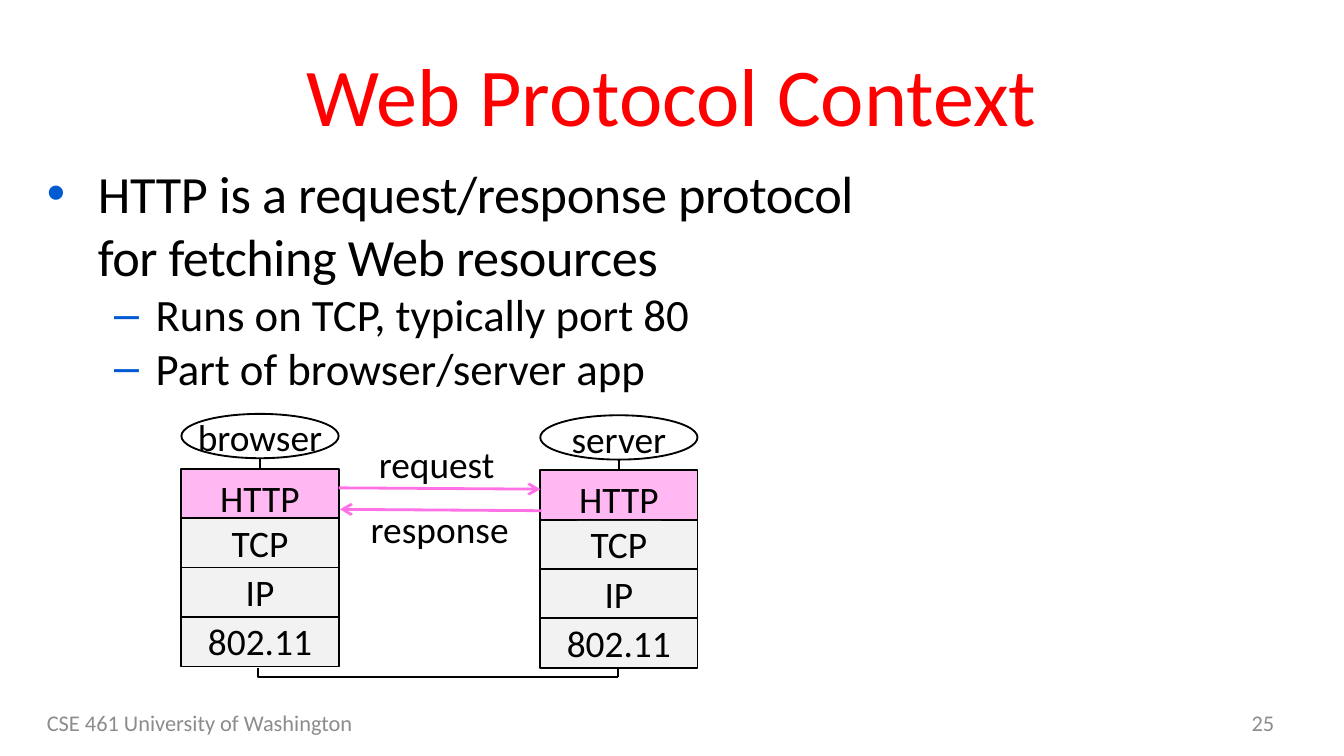
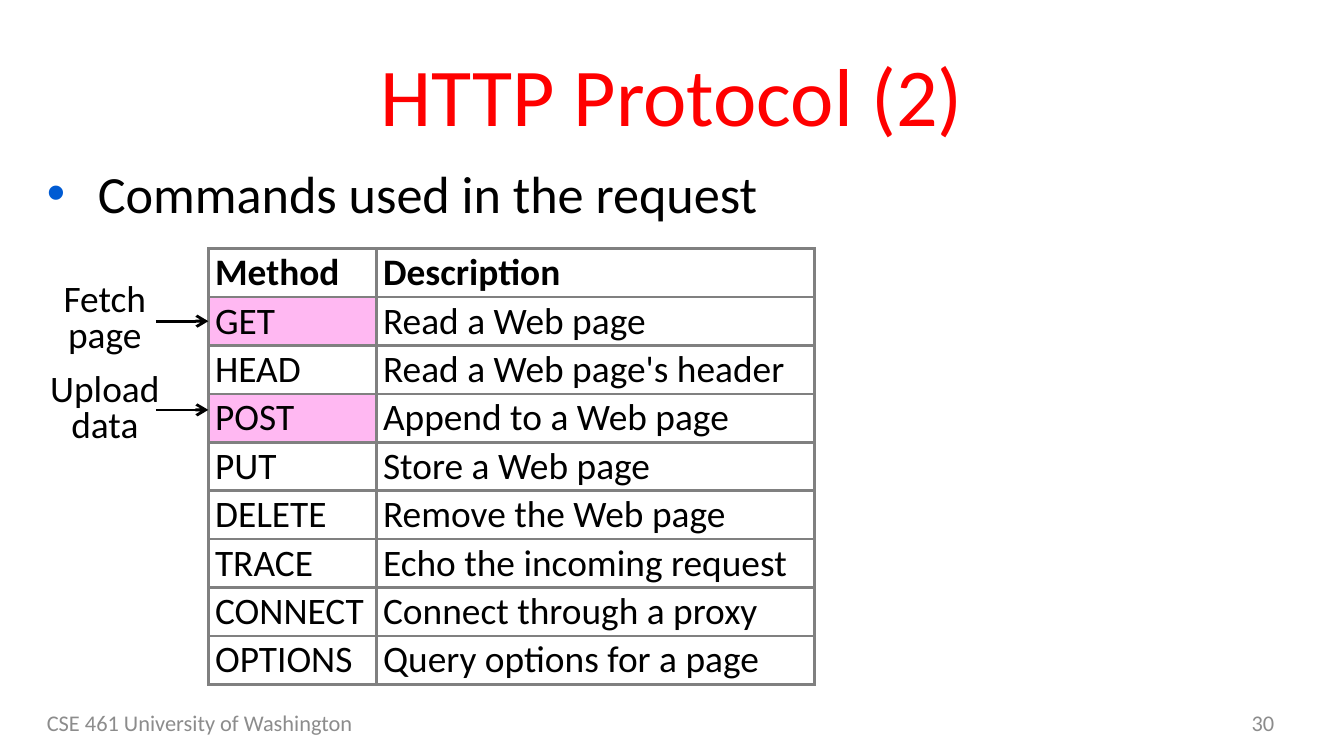
from dataclasses import dataclass
from typing import NamedTuple

from lxml.etree import SubElement
from pptx import Presentation
from pptx.dml.color import RGBColor
from pptx.enum.shapes import MSO_CONNECTOR as Connector, MSO_SHAPE as Preset
from pptx.enum.text import MSO_ANCHOR as Anchor, MSO_AUTO_SIZE as AutoSize, PP_ALIGN as Align
from pptx.oxml.ns import qn
from pptx.util import Inches, Pt


# Theme
@dataclass(frozen=True)
class Theme:
    font: str = "Calibri"
    text: str = "000000"
    title: str = "FF0000"
    bullet: str = "005BD3"
    footer: str = "8C8C8C"
    layer: str = "F2F2F2"
    highlight: str = "FFB8F2"
    message: str = "FF71E5"
    border: str = "808080"
    paper: str = "FFFFFF"
    title_size: float = 44
    body_size: float = 28
    sub_size: float = 24
    label_size: float = 20
    footer_size: float = 12
    thin: float = 1
    thick: float = 1.5


THEME = Theme()
FOOTER = "CSE 461 University of Washington"


class Box(NamedTuple):
    left: float
    top: float
    width: float
    height: float

    def lengths(self) -> list:
        return [Inches(value) for value in self]


class Bullet(NamedTuple):
    text: str
    level: int = 0
    tracking: float = 0


class Layer(NamedTuple):
    name: str
    label_width: float
    fill: str = THEME.layer


class Stack(NamedTuple):
    app: str
    app_width: float
    left: float
    top: float


class Callout(NamedTuple):
    lines: list
    box: Box
    arrow_y: float
    wrap: bool


# Slide 1 content
CONTEXT_BULLETS = [
    Bullet("HTTP is a request/response protocol for fetching Web resources", tracking=-0.2),
    Bullet("Runs on TCP, typically port 80", 1),
    Bullet("Part of browser/server app", 1),
]
LAYERS = [
    Layer("HTTP", 0.8, THEME.highlight),
    Layer("TCP", 0.63),
    Layer("IP", 0.42),
    Layer("802.11", 0.98),
]
STACKS = [Stack("browser", 1.14, 1.35, 3.08), Stack("server", 0.92, 4.02, 3.09)]
STACK_WIDTH, APP_HEIGHT, LAYER_HEIGHT = 1.17, 0.33, 0.37
LAYERS_OFFSET, LAYER_STEP = 0.41, 1.1 / 3
LABEL_HEIGHT = 0.34

# Slide 2 content
METHODS = [
    ("Method", "Description"),
    ("GET", "Read a Web page"),
    ("HEAD", "Read a Web page's header"),
    ("POST", "Append to a Web page"),
    ("PUT", "Store a Web page"),
    ("DELETE", "Remove the Web page"),
    ("TRACE", "Echo the incoming request"),
    ("CONNECT", "Connect through a proxy"),
    ("OPTIONS", "Query options for a page"),
]
HIGHLIGHTED = {"GET", "POST"}
COLUMN_WIDTHS, ROW_HEIGHT = (1.25, 3.26), 0.36
CALLOUTS = [
    Callout(["Fetch", "page"], Box(0.37, 2.06, 0.82, 0.65), 2.39, False),
    Callout(["Upload", "data"], Box(0.19, 2.73, 1.18, 0.65), 3.05, True),
]


def color(value: str) -> RGBColor:
    return RGBColor.from_string(value)


# Text
def write_text(frame, *lines: str, size: float = THEME.label_size, ink: str = THEME.text,
               bold: bool = False, align=Align.LEFT, line_spacing: float = 1.0) -> None:
    for index, line in enumerate(lines):
        paragraph = frame.paragraphs[0] if index == 0 else frame.add_paragraph()
        paragraph.alignment = align
        paragraph.line_spacing = line_spacing
        run = paragraph.add_run()
        run.text = line
        run.font.name = THEME.font
        run.font.size = Pt(size)
        run.font.bold = bold
        run.font.color.rgb = color(ink)


def add_text(slide, box: Box, *lines: str, anchor=Anchor.TOP, wrap: bool = True, grow: bool = False,
             tight: bool = False, fill: str = "", **text_format):
    shape = slide.shapes.add_textbox(*box.lengths())
    frame = shape.text_frame
    frame.word_wrap = wrap
    frame.vertical_anchor = anchor
    frame.auto_size = AutoSize.SHAPE_TO_FIT_TEXT if grow else AutoSize.NONE
    if tight:
        frame.margin_top = frame.margin_bottom = 0
    if fill:
        shape.fill.solid()
        shape.fill.fore_color.rgb = color(fill)
    write_text(frame, *lines, **text_format)
    return shape


def add_bullets(slide, bullets: list) -> None:
    frame = add_text(slide, Box(0.25, 1.15, 6.25, 3.92)).text_frame
    for index, bullet in enumerate(bullets):
        paragraph = frame.paragraphs[0] if index == 0 else frame.add_paragraph()
        indent, hanging, mark, size = [
            (0.38, 0.38, "•", THEME.body_size),
            (0.81, 0.31, "–", THEME.sub_size),
        ][bullet.level]
        paragraph.level = bullet.level
        run = paragraph.add_run()
        run.text = bullet.text
        run.font.name = THEME.font
        run.font.size = Pt(size)
        run.font.color.rgb = color(THEME.text)
        if bullet.tracking:
            run.font._element.set("spc", str(round(bullet.tracking * 100)))
        properties = paragraph._p.get_or_add_pPr()
        properties.set("marL", str(Inches(indent)))
        properties.set("indent", str(-Inches(hanging)))
        bullet_color = SubElement(properties, qn("a:buClr"))
        SubElement(bullet_color, qn("a:srgbClr"), val=THEME.bullet)
        SubElement(properties, qn("a:buFont"), typeface="Arial")
        SubElement(properties, qn("a:buChar"), char=mark)


# Shapes and lines
def add_outlined(slide, preset, box: Box, fill: str) -> None:
    shape = slide.shapes.add_shape(preset, *box.lengths())
    shape.shadow.inherit = False
    shape.fill.solid()
    shape.fill.fore_color.rgb = color(fill)
    shape.line.color.rgb = color(THEME.text)
    shape.line.width = Pt(THEME.thin)


def add_line(slide, begin: tuple, end: tuple, *, ink: str = THEME.text, width: float = THEME.thin,
             arrow: bool = False, kind=Connector.STRAIGHT):
    points = [Inches(value) for value in (*begin, *end)]
    connector = slide.shapes.add_connector(kind, *points)
    connector.line.color.rgb = color(ink)
    connector.line.width = Pt(width)
    if arrow:
        SubElement(connector.line._get_or_add_ln(), qn("a:tailEnd"), type="arrow")
    SubElement(connector._element.spPr, qn("a:effectLst"))
    return connector


def add_corner(slide, begin: tuple, end: tuple) -> None:
    """Line that runs down from begin, then right to end."""
    middle_x, middle_y = (begin[0] + end[0]) / 2, (begin[1] + end[1]) / 2
    half_run, half_drop = (end[0] - begin[0]) / 2, (end[1] - begin[1]) / 2
    connector = add_line(slide, (middle_x - half_drop, middle_y - half_run),
                         (middle_x + half_drop, middle_y + half_run), kind=Connector.ELBOW)
    properties = connector._element.spPr
    properties.find(qn("a:prstGeom")).set("prst", "bentConnector2")
    frame = properties.find(qn("a:xfrm"))
    frame.set("rot", str(270 * 60000))
    frame.set("flipH", "1")


# Shared slide parts
def add_slide(presentation, title: str, number: int, bullets: list):
    slide = presentation.slides.add_slide(presentation.slide_layouts[5])
    slide.background.fill.solid()
    slide.background.fill.fore_color.rgb = color(THEME.paper)
    heading = slide.shapes.title
    heading.left, heading.top, heading.width, heading.height = Box(0.25, 0.23, 9.5, 0.94).lengths()
    heading.text_frame.vertical_anchor = Anchor.MIDDLE
    heading.text_frame.auto_size = AutoSize.NONE
    write_text(heading.text_frame, title, size=THEME.title_size, ink=THEME.title, align=Align.CENTER)
    footer_format = dict(anchor=Anchor.MIDDLE, size=THEME.footer_size, ink=THEME.footer)
    add_text(slide, Box(0.25, 5.23, 3.17, 0.3), FOOTER, **footer_format)
    add_text(slide, Box(7.25, 5.23, 2.33, 0.3), str(number), align=Align.RIGHT, **footer_format)
    add_bullets(slide, bullets)
    return slide


# Protocol stacks
def add_stack(slide, stack: Stack) -> None:
    center = stack.left + STACK_WIDTH / 2

    def add_label(text: str, top: float, width: float, fill: str = "") -> None:
        add_text(slide, Box(center - width / 2, top, width, LABEL_HEIGHT), text, fill=fill,
                 anchor=Anchor.MIDDLE, wrap=False, grow=True, tight=True, align=Align.CENTER)

    add_outlined(slide, Preset.OVAL, Box(stack.left, stack.top, STACK_WIDTH, APP_HEIGHT), THEME.paper)
    add_label(stack.app, stack.top, stack.app_width)
    first_top = stack.top + LAYERS_OFFSET
    add_line(slide, (center, first_top), (center, stack.top + APP_HEIGHT))
    for index, layer in enumerate(LAYERS):
        top = first_top + index * LAYER_STEP
        add_outlined(slide, Preset.RECTANGLE, Box(stack.left, top, STACK_WIDTH, LAYER_HEIGHT), layer.fill)
        highlighted = layer.fill == THEME.highlight
        add_label(layer.name, top + (0.04 if highlighted else 0.01), layer.label_width,
                  "" if highlighted else layer.fill)


def build_context(presentation) -> None:
    slide = add_slide(presentation, "Web Protocol Context", 25, CONTEXT_BULLETS)
    add_corner(slide, (1.92, 4.97), (4.6, 5.04))
    add_line(slide, (4.6, 4.94), (4.6, 5.04))
    for stack in STACKS:
        add_stack(slide, stack)
    message = dict(ink=THEME.message, width=THEME.thick, arrow=True)
    add_line(slide, (2.52, 3.63), (4.02, 3.64), **message)
    add_line(slide, (4.03, 3.8), (2.53, 3.79), **message)
    add_text(slide, Box(2.72, 3.23, 1.07, 0.44), "request", wrap=False, grow=True)
    add_text(slide, Box(2.66, 3.72, 1.24, 0.44), "response", wrap=False, grow=True)


# Method table
def format_cell(cell, text: str, header: bool) -> None:
    cell.margin_left = cell.margin_right = Inches(0.05)
    cell.margin_top = cell.margin_bottom = Inches(0.01)
    cell.vertical_anchor = Anchor.MIDDLE
    write_text(cell.text_frame, text, bold=header)
    properties = cell._tc.get_or_add_tcPr()
    for side in ("a:lnL", "a:lnR", "a:lnT", "a:lnB"):
        line = SubElement(properties, qn(side), w=str(Pt(THEME.thick)))
        SubElement(SubElement(line, qn("a:solidFill")), qn("a:srgbClr"), val=THEME.border)
    if text in HIGHLIGHTED:
        cell.fill.solid()
        cell.fill.fore_color.rgb = color(THEME.highlight)
    else:
        cell.fill.background()


def build_methods(presentation) -> None:
    slide = add_slide(presentation, "HTTP Protocol (2)", 30, [Bullet("Commands used in the request")])
    box = Box(1.55, 1.85, sum(COLUMN_WIDTHS), ROW_HEIGHT * len(METHODS))
    table = slide.shapes.add_table(len(METHODS), len(COLUMN_WIDTHS), *box.lengths()).table
    table.first_row = table.horz_banding = False
    for column, width in zip(table.columns, COLUMN_WIDTHS):
        column.width = Inches(width)
    for row_index, row in enumerate(METHODS):
        table.rows[row_index].height = Inches(ROW_HEIGHT)
        for column_index, text in enumerate(row):
            format_cell(table.cell(row_index, column_index), text, header=row_index == 0)
    for callout in CALLOUTS:
        add_line(slide, (1.16, callout.arrow_y), (box.left, callout.arrow_y),
                 width=THEME.thick, arrow=True)
        add_text(slide, callout.box, *callout.lines, wrap=callout.wrap, grow=True,
                 align=Align.CENTER, line_spacing=0.8)


def main() -> None:
    presentation = Presentation()
    presentation.slide_width = Inches(10)
    presentation.slide_height = Inches(10 * 9 / 16)
    build_context(presentation)
    build_methods(presentation)
    presentation.save("out.pptx")


if __name__ == "__main__":
    main()
